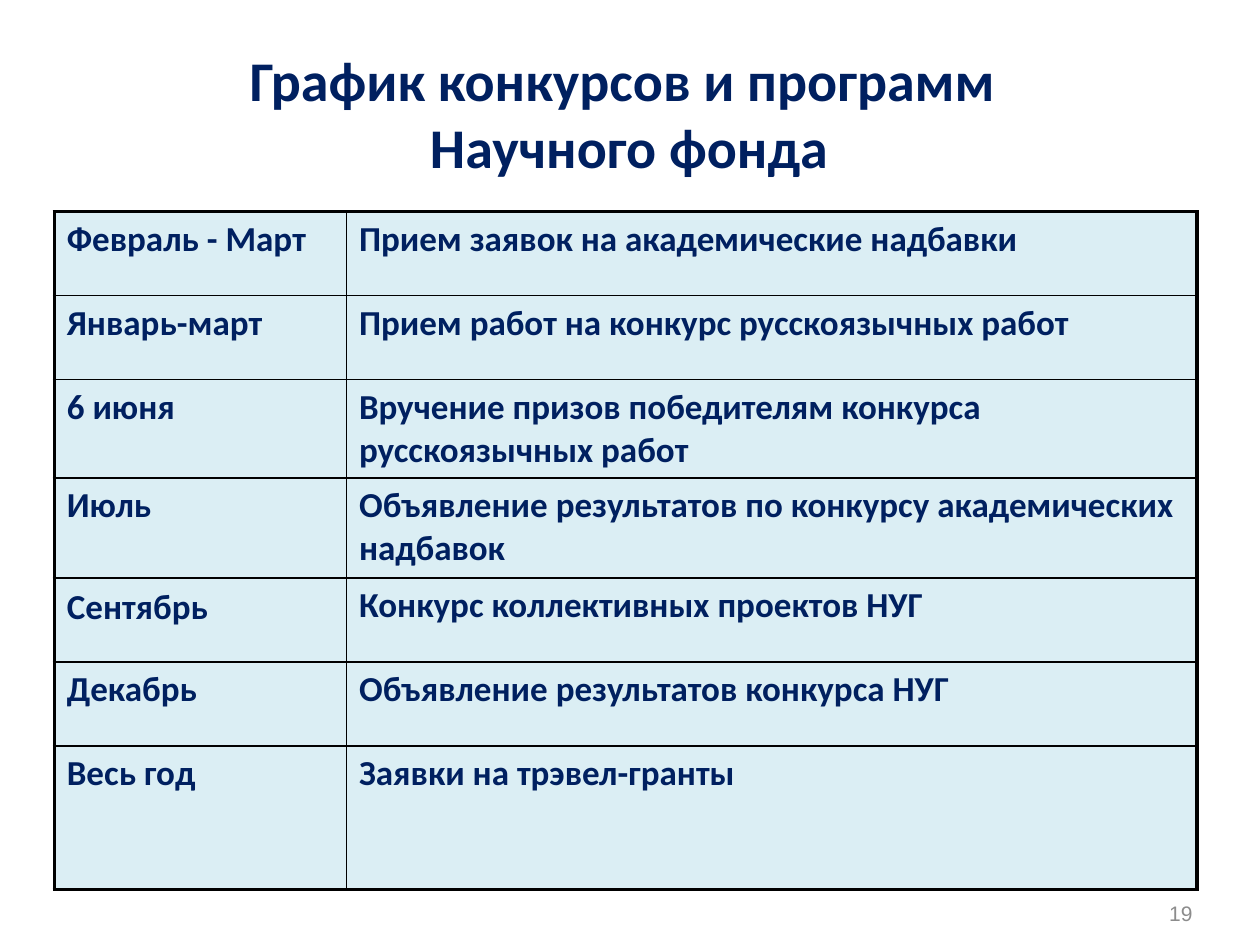
from dataclasses import dataclass

from lxml import etree
from pptx import Presentation
from pptx.dml.color import RGBColor
from pptx.enum import text
from pptx.oxml import ns
from pptx.util import Pt


@dataclass(frozen=True)
class Theme:
    navy: str = "002060"
    pale_blue: str = "DBEEF4"
    black: str = "000000"
    gray: str = "8C8C8C"
    title_size: float = 32
    table_size: float = 20
    number_size: float = 12
    thick: float = 2.25
    thin: float = 1


THEME = Theme()

SCHEDULE = [
    ("Февраль - Март", "Прием заявок на академические надбавки", 48),
    ("Январь-март", "Прием работ на конкурс русскоязычных работ", 48),
    ("6 июня", "Вручение призов победителям конкурса русскоязычных работ", 48),
    ("Июль", "Объявление результатов по конкурсу академических надбавок", 57),
    ("Сентябрь", "Конкурс коллективных проектов НУГ", 48),
    ("Декабрь", "Объявление результатов конкурса НУГ", 48),
    ("Весь год", "Заявки на трэвел-гранты", 82),
]


def format_spans(para, size, color, font="Calibri", bold=True):
    for span in para.runs:
        span.font.name = font
        span.font.size = Pt(size)
        span.font.bold = bold
        span.font.color.rgb = RGBColor.from_string(color)


def place(box, left, top, width, height):
    box.left, box.top = Pt(left), Pt(top)
    box.width, box.height = Pt(width), Pt(height)


def add_title(page, wording):
    title = page.shapes.title
    place(title, 42.5, 31.7, 634, 65)
    frame = title.text_frame
    frame.text = wording
    frame.auto_size = text.MSO_AUTO_SIZE.NONE
    frame.vertical_anchor = text.MSO_ANCHOR.MIDDLE
    para = frame.paragraphs[0]
    para.alignment = text.PP_ALIGN.CENTER
    format_spans(para, THEME.title_size, THEME.navy)


def set_borders(cell, widths):
    properties = cell._tc.get_or_add_tcPr()
    for side, width in widths.items():
        line = etree.SubElement(properties, ns.qn(f"a:ln{side}"), w=str(Pt(width)))
        fill = etree.SubElement(line, ns.qn("a:solidFill"))
        etree.SubElement(fill, ns.qn("a:srgbClr"), val=THEME.black)


def fill_cell(cell, wording, widths):
    set_borders(cell, widths)
    cell.fill.solid()
    cell.fill.fore_color.rgb = RGBColor.from_string(THEME.pale_blue)
    cell.text_frame.text = wording
    format_spans(cell.text_frame.paragraphs[0], THEME.table_size, THEME.navy)


def add_schedule(page, schedule):
    height = sum(row_height for _, _, row_height in schedule)
    table = page.shapes.add_table(
        len(schedule), 2, Pt(31), Pt(121), Pt(653), Pt(height)).table
    table.first_row = table.horz_banding = False
    for column, width in zip(table.columns, (167, 486)):
        column.width = Pt(width)

    last = len(schedule) - 1
    for row, (period, event, row_height) in enumerate(schedule):
        table.rows[row].height = Pt(row_height)
        for column, wording in enumerate((period, event)):
            # The outer frame is thick, the inner grid thin
            outer = {"L": column == 0, "R": column == 1,
                     "T": row == 0, "B": row == last}
            widths = {side: THEME.thick if edge else THEME.thin
                      for side, edge in outer.items()}
            fill_cell(table.cell(row, column), wording, widths)
        if period == "Сентябрь":
            table.cell(row, 0).text_frame.paragraphs[0].line_spacing = 1.05


def add_page_number(page, number):
    box = page.shapes.add_textbox(Pt(520.5), Pt(507.5), Pt(168), Pt(29))
    frame = box.text_frame
    frame.word_wrap = True
    frame.vertical_anchor = text.MSO_ANCHOR.MIDDLE
    frame.text = number
    para = frame.paragraphs[0]
    para.alignment = text.PP_ALIGN.RIGHT
    format_spans(para, THEME.number_size, THEME.gray, "Arial", False)


def main():
    deck = Presentation()
    deck.slide_width, deck.slide_height = Pt(720), Pt(540)
    page = deck.slides.add_slide(deck.slide_layouts.get_by_name("Title Only"))

    # Heading, timetable, page number
    add_title(page, "График конкурсов и программ \vНаучного фонда")
    add_schedule(page, SCHEDULE)
    add_page_number(page, "19")

    deck.save("out.pptx")


if __name__ == "__main__":
    main()
